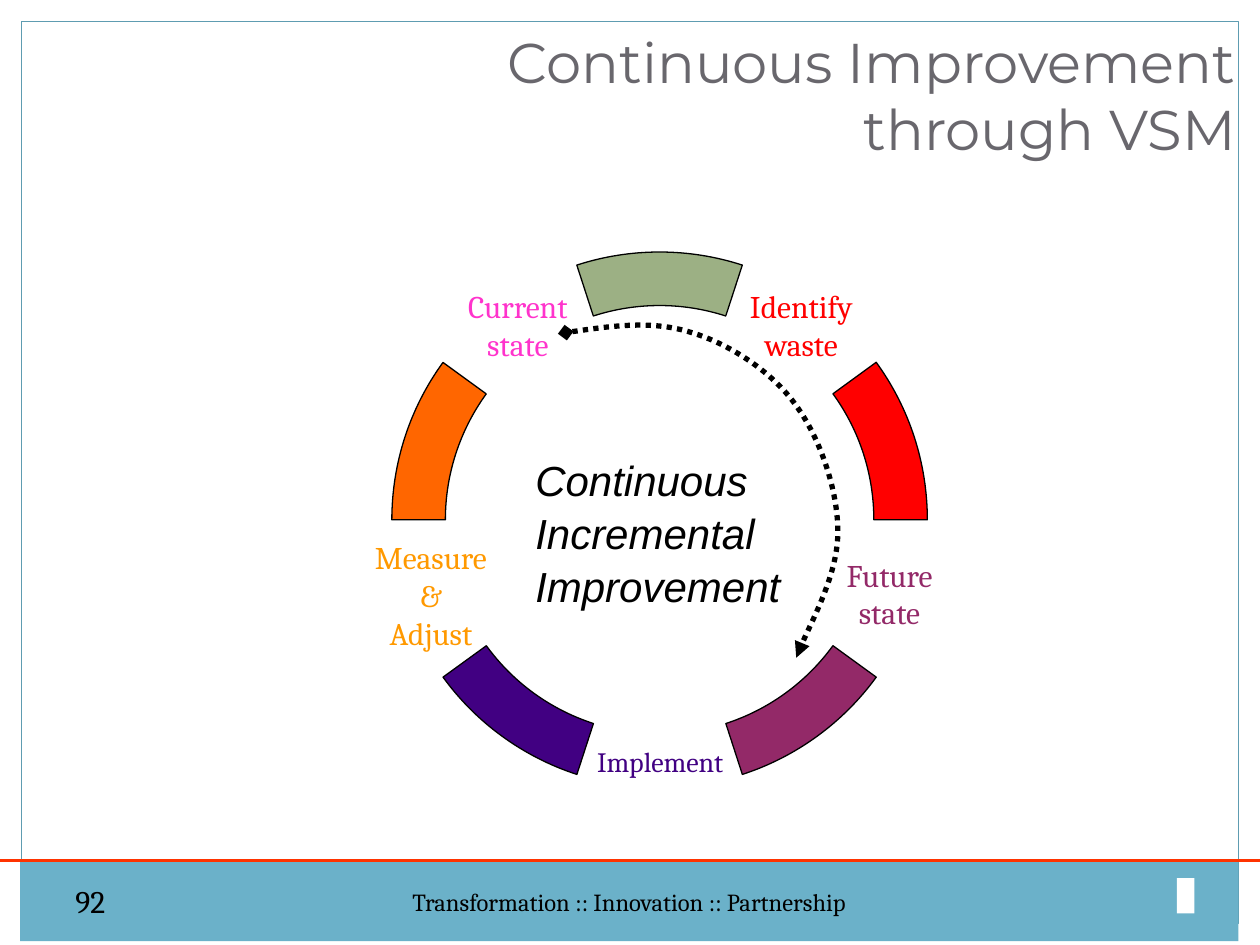
"""Build the slide on continuous improvement through value stream mapping."""
from dataclasses import dataclass
from typing import Any, Optional

from lxml import etree
from pptx import Presentation, util as u
from pptx.dml.color import RGBColor
from pptx.enum import dml, shapes, text
from pptx.oxml.ns import qn

PX = 9144
LEFT, MID, RIGHT = text.PP_ALIGN.LEFT, text.PP_ALIGN.CENTER, text.PP_ALIGN.RIGHT
TOP, HALF = text.MSO_ANCHOR.TOP, text.MSO_ANCHOR.MIDDLE


@dataclass(frozen=True)
class Theme:
    body: str = "Cambria"
    head: str = "Montserrat"
    core: str = "Arial"
    white: str = "FFFFFF"
    black: str = "000000"
    grey: str = "69676D"
    frame: str = "5E9CB1"
    bar: str = "6BB1C9"
    rule: str = "FF3300"
    green: str = "9CB084"
    red: str = "FF0000"
    plum: str = "932968"
    indigo: str = "410082"
    orange: str = "FF6600"
    amber: str = "FF9900"
    pink: str = "FF33CC"
    title: int = 32
    large: int = 24
    label: int = 18
    small: int = 16
    foot: int = 14


@dataclass(frozen=True)
class Box:
    x: int
    y: int
    w: int
    h: int

    def emu(self) -> list[int]:
        return [n * PX for n in (self.x, self.y, self.w, self.h)]


@dataclass(frozen=True)
class Label:
    words: str
    box: Box
    color: str
    size: int = Theme.label
    font: str = Theme.body
    align: Any = MID
    anchor: Any = HALF
    slant: bool = False
    pitch: float = 1.0


T = Theme()
SIDE = 94
RING = Box(311, 200, 425, 425)
ARCS = [T.green, T.red, T.plum, T.indigo, T.orange]
TITLE = Label("Continuous Improvement through VSM", Box(249, 17, 742, 118),
              T.grey, T.title, T.head, RIGHT, TOP)
FOOT = Label("Transformation :: Innovation :: Partnership", Box(16, 684, 967, 63),
             T.black, T.foot)
LABELS = [
    Label("92", Box(50, 695, 233, 40), T.black, align=LEFT, anchor=TOP),
    Label("Identify\nwaste", Box(589, 211, SIDE, SIDE), T.red),
    Label("Measure\n&\nAdjust", Box(295, 425, SIDE, SIDE), T.amber),
    Label("Current\nstate", Box(364, 211, SIDE, SIDE), T.pink),
    Label("Future\nstate", Box(659, 424, SIDE, SIDE), T.plum),
    Label("Implement", Box(477, 557, SIDE, SIDE), T.indigo, T.small),
    Label("Continuous\nIncremental\nImprovement", Box(415, 354, 230, 130), T.black,
          T.large, T.core, LEFT, TOP, True, 1.05),
]
START = (449, 264)
CURVE = [(483, 259), (518, 254), (549, 264), (579, 273), (613, 295), (632, 322),
         (651, 348), (665, 389), (665, 422), (665, 455), (638, 505), (632, 522)]


def write(shape: Any, label: Label) -> None:
    """Put a label's words into a shape and format them."""
    frame = shape.text_frame
    frame.text = label.words
    frame.auto_size = text.MSO_AUTO_SIZE.NONE
    frame.word_wrap = label.align != MID
    frame.vertical_anchor = label.anchor
    for para in frame.paragraphs:
        para.alignment = label.align
        para.line_spacing = label.pitch
        for run in para.runs:
            run.font.name = label.font
            run.font.size = u.Pt(label.size)
            run.font.italic = label.slant
            run.font.color.rgb = RGBColor.from_string(label.color)


def stroke(line: Any, color: str, width: float) -> None:
    """Give a line its colour and width."""
    line.color.rgb = RGBColor.from_string(color)
    line.width = u.Pt(width)


def block(slide: Any, kind: Any, box: Box, fill: Optional[str],
          line: Optional[str]) -> Any:
    """Draw a preset shape with an optional fill and thin outline."""
    shape = slide.shapes.add_shape(kind, *box.emu())
    shape.shadow.inherit = False
    if fill:
        shape.fill.solid()
        shape.fill.fore_color.rgb = RGBColor.from_string(fill)
    else:
        shape.fill.background()
    if line:
        stroke(shape.line, line, 0.75)
    else:
        shape.line.fill.background()
    return shape


def draw_base(slide: Any) -> None:
    """Draw the frame, the footer bar and its rule."""
    rect = shapes.MSO_SHAPE.RECTANGLE
    block(slide, rect, Box(17, 17, 966, 716), None, T.frame)
    write(block(slide, rect, FOOT.box, T.bar, None), FOOT)
    block(slide, rect, Box(934, 697, 14, 28), T.white, None)
    rule = slide.shapes.add_connector(
        shapes.MSO_CONNECTOR.STRAIGHT, 0, 683 * PX, 1000 * PX, 683 * PX)
    stroke(rule.line, T.rule, 2)
    etree.SubElement(rule._element.spPr, qn("a:effectLst"))


def draw_ring(slide: Any) -> None:
    """Draw equal arcs turned evenly about one centre."""
    step = 360 / len(ARCS)
    for turn, color in enumerate(ARCS):
        arc = block(slide, shapes.MSO_SHAPE.BLOCK_ARC, RING, color, T.black)
        for spot, angle in enumerate((270 - step / 4, 270 + step / 4)):
            arc.adjustments[spot] = angle * 0.6
        arc.adjustments[2] = 0.1
        arc.rotation = turn * step


def draw_curve(slide: Any) -> None:
    """Draw the dotted arrow as a chain of cubic curves."""
    pen = slide.shapes.build_freeform(*START, scale=PX)
    pen.add_line_segments(CURVE, close=False)
    arrow = pen.convert_to_shape()
    arrow.shadow.inherit = False
    arrow.fill.background()
    stroke(arrow.line, T.black, 3)
    arrow.line.dash_style = dml.MSO_LINE.ROUND_DOT
    track = arrow._element.find(".//" + qn("a:path"))
    parts = track.findall(qn("a:lnTo"))
    for first in range(0, len(parts), 3):
        curve = etree.SubElement(track, qn("a:cubicBezTo"))
        for part in parts[first:first + 3]:
            curve.append(part[0])
            track.remove(part)
    for end, kind in (("headEnd", "diamond"), ("tailEnd", "triangle")):
        etree.SubElement(arrow.line._get_or_add_ln(), qn("a:" + end), type=kind)


def main() -> None:
    """Build and save the slide."""
    deck = Presentation()
    deck.slide_width, deck.slide_height = 1000 * PX, 750 * PX
    slide = deck.slides.add_slide(deck.slide_layouts[5])
    title = slide.shapes.title
    title.left, title.top, title.width, title.height = TITLE.box.emu()
    write(title, TITLE)
    draw_base(slide)
    draw_ring(slide)
    for label in LABELS:
        write(slide.shapes.add_textbox(*label.box.emu()), label)
    draw_curve(slide)
    deck.save("out.pptx")


if __name__ == "__main__":
    main()
